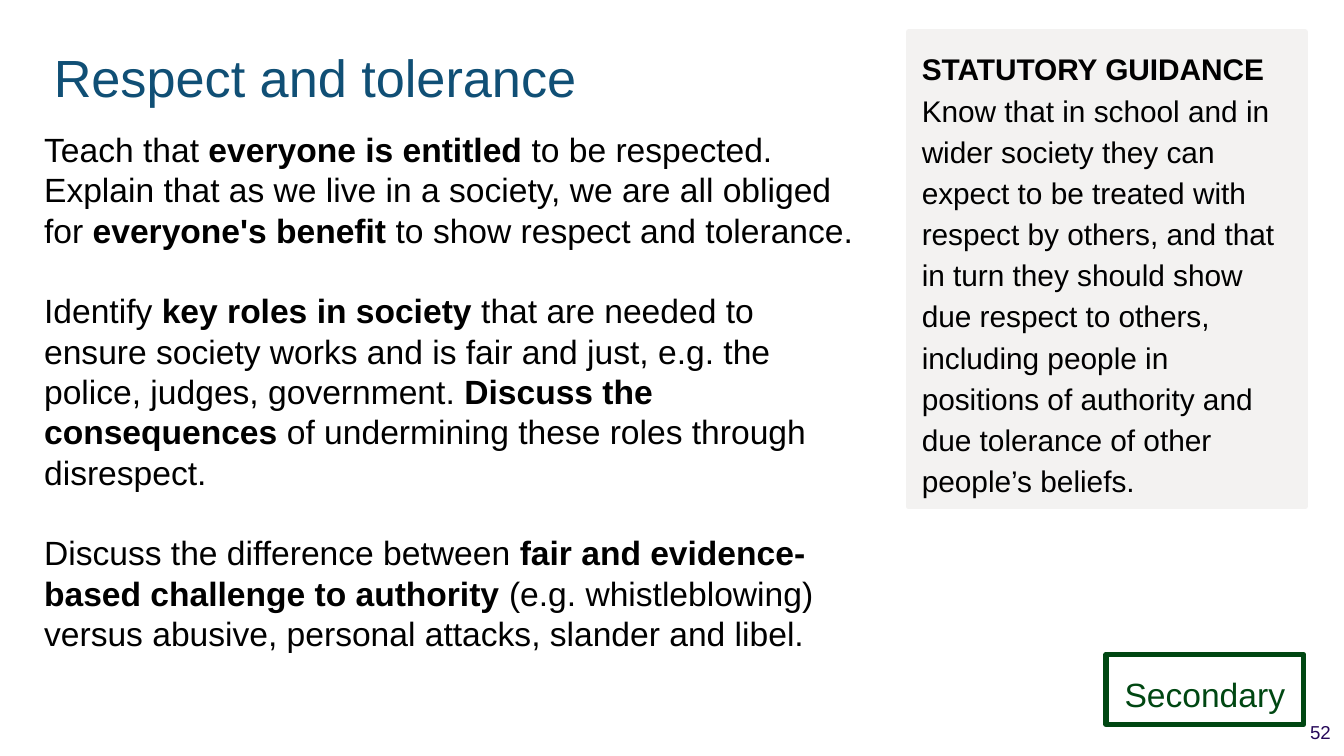
from pptx import Presentation
from pptx.dml.color import RGBColor
from pptx.enum.shapes import MSO_SHAPE
from pptx.enum.text import MSO_ANCHOR, PP_ALIGN
from pptx.util import Inches, Pt

RECTANGLE = MSO_SHAPE.RECTANGLE
TOP, MIDDLE = MSO_ANCHOR.TOP, MSO_ANCHOR.MIDDLE
LEFT, CENTER, RIGHT = PP_ALIGN.LEFT, PP_ALIGN.CENTER, PP_ALIGN.RIGHT

THEME = {
    "font": "Arial",
    "title": "104F75", "text": "000000", "panel": "F3F2F1",
    "badge": "004712", "number": "260859",
    "title_size": 28, "body_size": 18, "guidance_size": 16, "number_size": 10,
    "border": 3,
}


def write(shape, paragraphs, size, color="text", align=LEFT, anchor=TOP, spacing=1.0, gap=0):
    frame = shape.text_frame
    frame.word_wrap = True
    frame.vertical_anchor = anchor
    frame.margin_left = frame.margin_right = Inches(0.1)
    frame.margin_top = frame.margin_bottom = Inches(0.1)
    for index, pieces in enumerate(paragraphs):
        paragraph = frame.add_paragraph() if index else frame.paragraphs[0]
        paragraph.alignment = align
        paragraph.line_spacing = spacing
        paragraph.space_before = Pt(gap if index else 0)
        for words, bold in pieces:
            run = paragraph.add_run()
            run.text = words.rstrip("\n")
            run.font.name = THEME["font"]
            run.font.size = Pt(THEME[size])
            run.font.bold = bold
            run.font.color.rgb = RGBColor.from_string(THEME[color])
            if words.endswith("\n"):
                paragraph.add_line_break()


def add_box(left, top, width, height, line, fill=None):
    box = slide.shapes.add_shape(
        RECTANGLE, Inches(left), Inches(top), Inches(width), Inches(height))
    box.shadow.inherit = False
    if fill:
        box.fill.solid()
        box.fill.fore_color.rgb = RGBColor.from_string(THEME[fill])
    else:
        box.fill.background()
    box.line.color.rgb = RGBColor.from_string(THEME[line])
    box.line.width = Pt(THEME["border"])
    return box


prs = Presentation()
prs.slide_width = Inches(10)
prs.slide_height = Inches(10) * 9 // 16
slide = prs.slides.add_slide(prs.slide_layouts[5])

title = slide.shapes.title
title.left, title.top = Inches(0.3), Inches(0.24)
title.width, title.height = Inches(6.41), Inches(0.63)
write(title, [[("Respect and tolerance", False)]], "title_size", color="title")

teaching = slide.shapes.add_textbox(Inches(0.23), Inches(0.86), Inches(6.25), Inches(4.33))
write(teaching, [
    [("Teach that ", False),
     ("everyone is entitled ", True),
     ("to be respected. Explain that as we live in a society, we are all obliged for ", False),
     ("everyone's benefit ", True),
     ("to show respect and tolerance.", False)],
    [("Identify ", False),
     ("key roles in society ", True),
     ("that are needed to ensure society works and is fair and just, "
      "e.g. the police, judges, government. ", False),
     ("Discuss the consequences", True),
     (" of undermining these roles through disrespect.", False)],
    [("Discuss the difference between ", False),
     ("fair and evidence-based challenge to authority ", True),
     ("(e.g. whistleblowing) versus abusive, personal attacks, slander and libel.", False)],
], "body_size", gap=21.6)

guidance = add_box(6.76, 0.24, 2.95, 3.53, line="panel", fill="panel")
write(guidance, [
    [("STATUTORY GUIDANCE\n", True),
     ("Know that in school and in wider society they can expect to be treated with "
      "respect by others, and that in turn they should show due respect to others, "
      "including people in positions of authority and due tolerance of other "
      "people’s beliefs.", False)],
], "guidance_size", spacing=1.15)

phase = add_box(8.23, 4.87, 1.47, 0.52, line="badge")
write(phase, [[("Secondary", False)]], "body_size", color="badge", align=CENTER, spacing=1.15)

page_number = slide.shapes.add_textbox(Inches(9.61), Inches(5.26), Inches(0.39), Inches(0.37))
write(page_number, [[("52", False)]], "number_size", color="number", align=RIGHT, anchor=MIDDLE)

prs.save("out.pptx")
